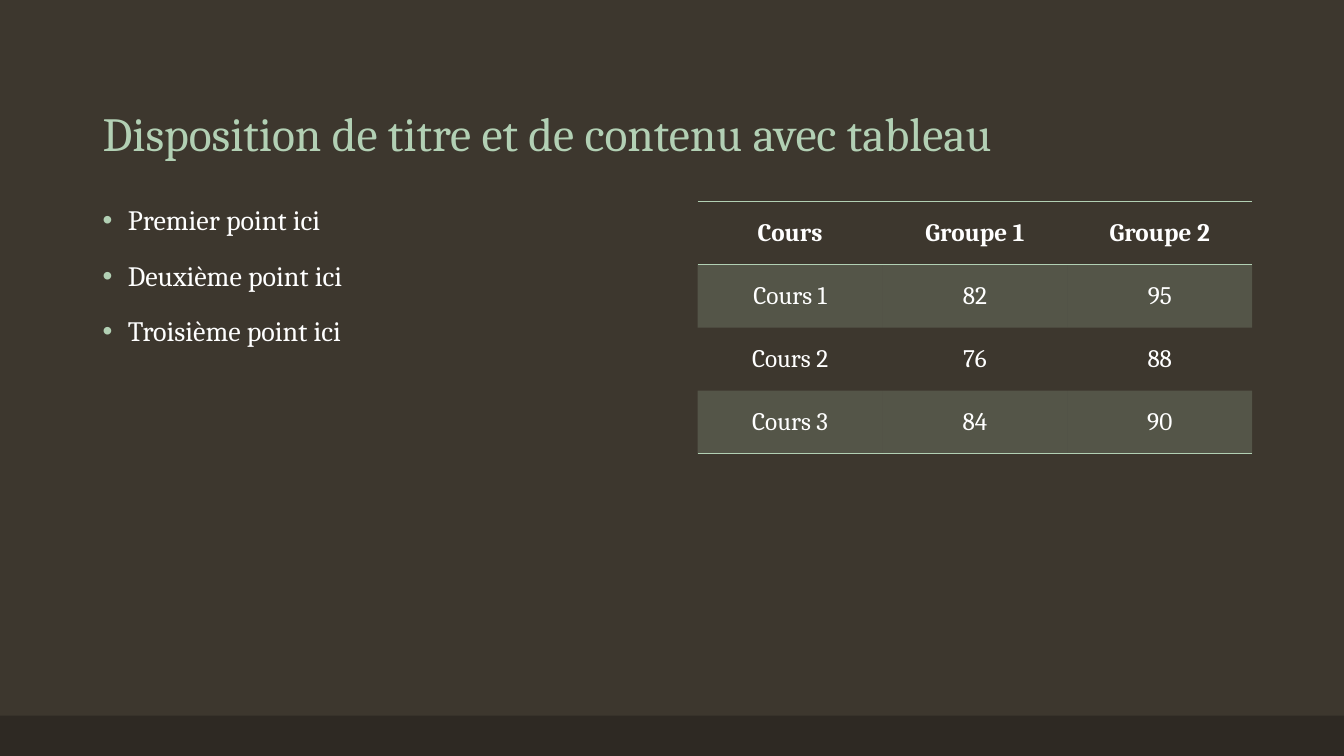
from lxml.etree import SubElement
from pptx import Presentation
from pptx.dml.color import RGBColor
from pptx.enum.shapes import MSO_SHAPE
from pptx.enum.text import MSO_ANCHOR, PP_ALIGN
from pptx.oxml import parse_xml
from pptx.oxml.ns import nsdecls, qn
from pptx.util import Inches, Pt

COLORS = {"background": "3D372E", "footer": "2E2923", "accent": "B2D0B4", "text": "FFFFFF"}
FONT = "Cambria"
NO_STYLE = "{2D5ABB26-0587-4C30-8999-92F81FD0307C}"
POINTS = ["Premier point ici", "Deuxième point ici", "Troisième point ici"]
SCORES = [
    ["Cours", "Groupe 1", "Groupe 2"],
    ["Cours 1", "82", "95"],
    ["Cours 2", "76", "88"],
    ["Cours 3", "84", "90"],
]


def color(name):
    """Return the named colour."""
    return RGBColor.from_string(COLORS[name])


def add_run(paragraph, text, size, tint="text", bold=False):
    """Append one formatted run to a paragraph."""
    run = paragraph.add_run()
    run.text = text
    run.font.name = FONT
    run.font.size = Pt(size)
    run.font.bold = bold
    run.font.color.rgb = color(tint)


def add_frame(slide, left, top, width, height, anchor):
    """Add a wrapping text box and return its text frame."""
    frame = slide.shapes.add_textbox(
        Inches(left), Inches(top), Inches(width), Inches(height)).text_frame
    frame.word_wrap = True
    frame.vertical_anchor = anchor
    return frame


def add_footer(slide):
    """Draw the dark band along the bottom edge."""
    band = slide.shapes.add_shape(
        MSO_SHAPE.RECTANGLE, 0, Inches(7.1), Inches(13.33), Inches(0.4))
    band.shadow.inherit = False
    band.fill.solid()
    band.fill.fore_color.rgb = color("footer")
    band.line.fill.background()


def add_title(slide, text):
    """Write the slide title."""
    heading = add_frame(slide, 0.92, 0.4, 11.5, 1.25, MSO_ANCHOR.BOTTOM).paragraphs[0]
    heading.line_spacing = 0.9
    add_run(heading, text, 34, "accent")


def add_points(slide, points):
    """Write the bulleted list."""
    frame = add_frame(slide, 0.92, 2, 5.5, 4.76, MSO_ANCHOR.TOP)
    for index, text in enumerate(points):
        point = frame.add_paragraph() if index else frame.paragraphs[0]
        point.line_spacing = 0.9
        if index:
            point.space_before = Pt(18)
        properties = point._p.get_or_add_pPr()
        properties.set("marL", str(Inches(0.25)))
        properties.set("indent", str(-Inches(0.25)))
        bullet_color = SubElement(properties, qn("a:buClr"))
        SubElement(bullet_color, qn("a:srgbClr"), val=COLORS["accent"])
        SubElement(properties, qn("a:buFont"), typeface="Arial")
        SubElement(properties, qn("a:buChar"), char="•")
        add_run(point, text, 20)


def add_borders(cell, sides):
    """Rule the given sides of a cell, listed in schema order."""
    for position, side in enumerate(sides):
        border = parse_xml(
            f'<a:{side} {nsdecls("a")} w="{Pt(1)}"><a:solidFill>'
            f'<a:srgbClr val="{COLORS["accent"]}"/></a:solidFill></a:{side}>')
        cell._tc.get_or_add_tcPr().insert(position, border)


def fill_cell(cell, shaded):
    """Give a cell a translucent tint or no fill."""
    if not shaded:
        cell.fill.background()
        return
    cell.fill.solid()
    cell.fill.fore_color.rgb = color("accent")
    tint = cell._tc.tcPr.find(".//" + qn("a:srgbClr"))
    SubElement(tint, qn("a:alpha"), val="20000")


def add_scores(slide, scores):
    """Build the banded table of scores."""
    table = slide.shapes.add_table(
        len(scores), len(scores[0]),
        Inches(6.92), Inches(2), Inches(5.5), Inches(2.5)).table
    table._tbl.tblPr.find(qn("a:tableStyleId")).text = NO_STYLE
    borders = {0: ["lnT", "lnB"], len(scores) - 1: ["lnB"]}
    for row, values in enumerate(scores):
        for column, value in enumerate(values):
            cell = table.cell(row, column)
            cell.vertical_anchor = MSO_ANCHOR.MIDDLE
            fill_cell(cell, shaded=row % 2 == 1)
            add_borders(cell, borders.get(row, []))
            entry = cell.text_frame.paragraphs[0]
            entry.alignment = PP_ALIGN.CENTER
            add_run(entry, value, 18, bold=row == 0)


def main():
    """Build and save the slide."""
    deck = Presentation()
    deck.slide_width, deck.slide_height = Inches(13.33), Inches(7.5)
    slide = deck.slides.add_slide(deck.slide_layouts[6])
    slide.background.fill.solid()
    slide.background.fill.fore_color.rgb = color("background")
    add_footer(slide)
    add_title(slide, "Disposition de titre et de contenu avec tableau")
    add_points(slide, POINTS)
    add_scores(slide, SCORES)
    deck.save("out.pptx")


if __name__ == "__main__":
    main()
